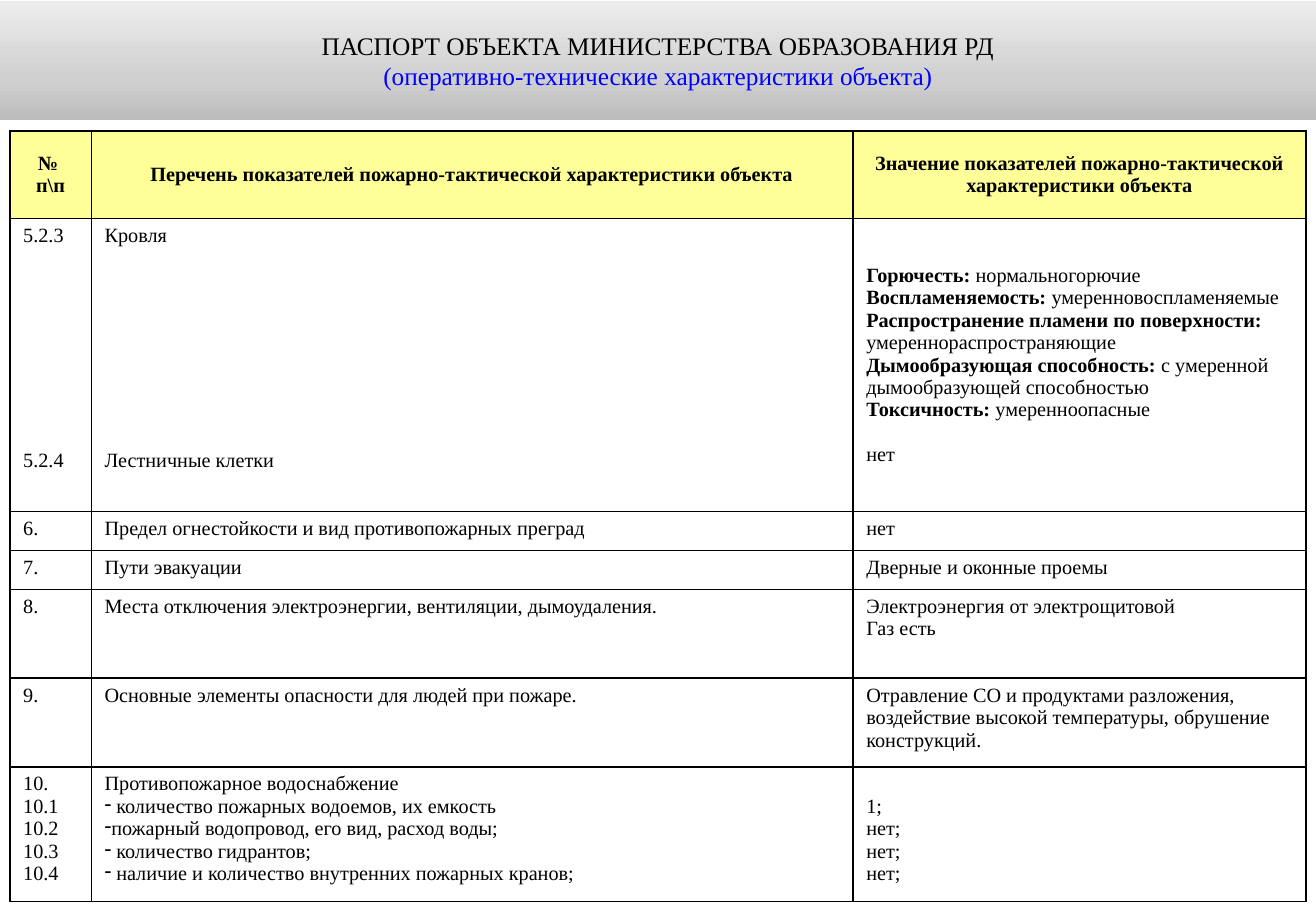
import copy

import lxml.etree
import pptx
import pptx.dml.color
import pptx.enum.shapes
import pptx.enum.text
import pptx.oxml.ns
import pptx.util

W, H = pptx.util.Inches(10.83), pptx.util.Inches(7.5)
FONT = "Times New Roman"
LINE_PITCH = 13.3
COLS = [0.67, 6.27, 3.73]
ROWS = [0.72, 2.41, 0.32, 0.32, 0.73, 0.73, 1.11]
TITLE = [
    ("ПАСПОРТ ОБЪЕКТА МИНИСТЕРСТВА ОБРАЗОВАНИЯ РД", "000000"),
    ("(оперативно-технические характеристики объекта)", "0000FF"),
]
GRADIENT = [(0, "BCBCBC"), (0.35, "D0D0D0"), (1, "EDEDED")]
BLANK = [""] * 9
CELLS = [
    [["№ ", "п\\п"],
     ["Перечень показателей пожарно-тактической характеристики объекта"],
     ["Значение показателей пожарно-тактической характеристики объекта"]],
    [["5.2.3", *BLANK, "5.2.4"],
     ["Кровля", *BLANK, "Лестничные клетки"],
     ["Горючесть: нормальногорючие",
      "Воспламеняемость: умеренновоспламеняемые",
      "Распространение пламени по поверхности:",
      "умереннораспространяющие",
      "Дымообразующая способность: с умеренной дымообразующей способностью",
      "Токсичность: умеренноопасные", "", "нет"]],
    [["6."], ["Предел огнестойкости и вид противопожарных преград"], ["нет"]],
    [["7."], ["Пути эвакуации"], ["Дверные и оконные проемы"]],
    [["8."],
     ["Места отключения электроэнергии, вентиляции, дымоудаления."],
     ["Электроэнергия от электрощитовой", "Газ есть"]],
    [["9."],
     ["Основные элементы опасности для людей при пожаре."],
     ["Отравление СО и продуктами разложения, воздействие высокой "
      "температуры, обрушение конструкций."]],
    [["10.", "10.1", "10.2", "10.3", "10.4"],
     ["Противопожарное водоснабжение",
      "- количество пожарных водоемов, их емкость",
      "-пожарный водопровод, его вид, расход воды;",
      "- количество гидрантов;",
      "- наличие и количество внутренних пожарных кранов;"],
     ["", "1;", "нет;", "нет;", "нет;"]],
]


def rgb(value):
    return pptx.dml.color.RGBColor.from_string(value)


def style_run(r, size, color="000000", bold=False):
    r.font.name = FONT
    r.font.size = pptx.util.Pt(size)
    r.font.bold = bold
    r.font.color.rgb = rgb(color)


def sub(parent, tag, **attrs):
    return lxml.etree.SubElement(parent, pptx.oxml.ns.qn(tag), attrs)


def add_dash(p):
    pPr = p._p.get_or_add_pPr()
    pPr.set("marL", "0")
    pPr.set("indent", "0")
    sub(pPr, "a:buChar", char="-")


def add_borders(cell):
    tcPr = cell._tc.get_or_add_tcPr()
    for i, side in enumerate("LRTB"):
        ln = sub(tcPr, "a:ln" + side, w=str(pptx.util.Pt(1)))
        sub(sub(ln, "a:solidFill"), "a:srgbClr", val="000000")
        tcPr.insert(i, ln)


def write_line(p, line, header):
    if line.startswith("-"):
        add_dash(p)
        line = line[1:]
    label, colon, value = line.partition(":")
    p.text = label + colon
    style_run(p.runs[0], 12, bold=header or bool(colon))
    if value:
        r = p.add_run()
        r.text = value
        style_run(r, 12)
    if header:
        p.alignment = pptx.enum.text.PP_ALIGN.CENTER


def fill_cell(cell, lines, header, middle):
    cell.fill.solid()
    cell.fill.fore_color.rgb = rgb("FFFF99" if header else "FFFFFF")
    add_borders(cell)
    cell.margin_left = cell.margin_right = pptx.util.Inches(0.11)
    cell.margin_top = cell.margin_bottom = pptx.util.Inches(0.05)
    if middle:
        cell.vertical_anchor = pptx.enum.text.MSO_ANCHOR.MIDDLE
    tf = cell.text_frame
    p, gap = None, 0
    for line in lines:
        if not line:
            gap += LINE_PITCH
            continue
        if p is None:
            p = tf.paragraphs[0]
            cell.margin_top += pptx.util.Pt(gap)
        else:
            p = tf.add_paragraph()
            p.space_before = pptx.util.Pt(gap)
        write_line(p, line, header)
        gap = 0


def add_passport_table(s):
    width, height = 0.985 * W, 0.846 * H
    table = s.shapes.add_table(
        len(ROWS), len(COLS), int(0.0075 * W), int(0.144 * H),
        int(width), int(height)).table
    table.first_row = table.horz_banding = False
    for column, share in zip(table.columns, COLS):
        column.width = int(width * share / sum(COLS))
    for row, share in zip(table.rows, ROWS):
        row.height = int(height * share / sum(ROWS))
    for i, row in enumerate(CELLS):
        for j, lines in enumerate(row):
            fill_cell(table.cell(i, j), lines, i == 0, i == 0 or (i, j) == (1, 2))


def add_title_band(s):
    sp = s.shapes.add_shape(
        pptx.enum.shapes.MSO_SHAPE.RECTANGLE, 0, int(0.001 * H), W, int(0.131 * H))
    sp.shadow.inherit = False
    sp.line.fill.background()
    sp.fill.gradient()
    sp.fill.gradient_angle = 90
    stops = sp._element.spPr.find(".//" + pptx.oxml.ns.qn("a:gsLst"))
    stops.append(copy.deepcopy(stops[0]))
    for stop, (position, color) in zip(sp.fill.gradient_stops, GRADIENT):
        stop.position = position
        stop.color.rgb = rgb(color)
    tf = sp.text_frame
    tf.word_wrap = True
    tf.vertical_anchor = pptx.enum.text.MSO_ANCHOR.MIDDLE
    tf.text = "\n".join(text for text, color in TITLE)
    for p, (text, color) in zip(tf.paragraphs, TITLE):
        p.alignment = pptx.enum.text.PP_ALIGN.CENTER
        style_run(p.runs[0], 15, color)


def main():
    prs = pptx.Presentation()
    prs.slide_width, prs.slide_height = W, H
    s = prs.slides.add_slide(prs.slide_layouts[6])
    add_passport_table(s)
    add_title_band(s)
    prs.save("out.pptx")


if __name__ == "__main__":
    main()
